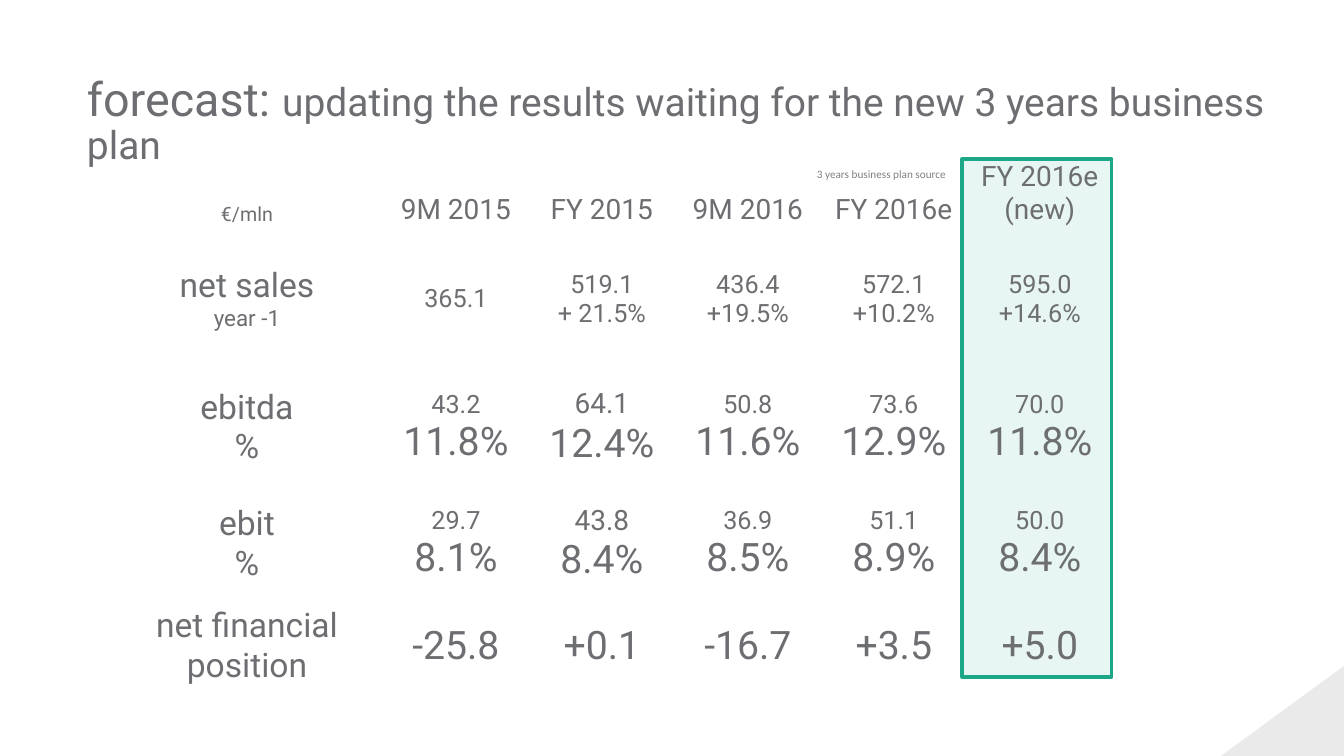
from lxml import etree
from pptx import Presentation
from pptx.dml.color import RGBColor
from pptx.enum.shapes import MSO_SHAPE
from pptx.enum.text import MSO_ANCHOR, MSO_AUTO_SIZE, PP_ALIGN
from pptx.oxml.ns import qn
from pptx.util import Emu, Pt

RECT, WEDGE = MSO_SHAPE.RECTANGLE, MSO_SHAPE.RIGHT_TRIANGLE
TOP, MIDDLE, BOTTOM = MSO_ANCHOR.TOP, MSO_ANCHOR.MIDDLE, MSO_ANCHOR.BOTTOM
LEFT, CENTER = PP_ALIGN.LEFT, PP_ALIGN.CENTER
FIXED = MSO_AUTO_SIZE.NONE

WIDE, HIGH = 1344, 756
SCALE = 12192000 / WIDE
TITLE_ONLY = 5
PLAIN_TABLE = "{2D5ABB26-0587-4C30-8999-92F81FD0307C}"
COLORS = {"text": "6D6E71", "note": "808080", "accent": "1DA789", "corner": "EAEAEA"}

COLS = [272] + [146] * 5
# Per row: height, padding, anchor, label sizes, value sizes, texts
ROWS = [
    (75, 11, BOTTOM, [14], [20],
     ["€/mln", "9M 2015", "FY 2015", "9M 2016", "FY 2016e", "FY 2016e (new)"]),
    (125, 11, MIDDLE, [24, 16], [18, 18],
     ["net sales\nyear -1", "365.1", "519.1\n+ 21.5%", "436.4\n+19.5%",
      "572.1\n+10.2%", "595.0\n+14.6%"]),
    (131, 12, MIDDLE, [24, 24], [18, 28],
     ["ebitda\n%", "43.2\n11.8%", "64.1\n12.4%", "50.8\n11.6%",
      "73.6\n12.9%", "70.0\n11.8%"]),
    (102, 0, MIDDLE, [24, 24], [18, 28],
     ["ebit\n%", "29.7\n8.1%", "43.8\n8.4%", "36.9\n8.5%", "51.1\n8.9%", "50.0\n8.4%"]),
    (102, 0, MIDDLE, [24], [28],
     ["net financial position", "-25.8", "+0.1", "-16.7", "+3.5", "+5.0"]),
]
LARGER = {(2, 2): [20, 28], (3, 2): [20, 28]}


def px(n):
    return Emu(round(n * SCALE))


def rgb(name):
    return RGBColor.from_string(COLORS[name])


class Deck:
    def __init__(self):
        self.prs = Presentation()
        self.prs.slide_width, self.prs.slide_height = px(WIDE), px(HIGH)
        self.slide = self.prs.slides.add_slide(self.prs.slide_layouts[TITLE_ONLY])
        self.shapes = self.slide.shapes

    def style(self, run, size, font="Roboto", color="text"):
        run.font.size, run.font.name = Pt(size), font
        run.font.color.rgb = rgb(color)

    def title(self, x, y, w, h, parts):
        box = self.shapes.title
        box.left, box.top, box.width, box.height = map(px, (x, y, w, h))
        frame = box.text_frame
        frame.margin_left = frame.margin_right = 0
        frame.margin_top = frame.margin_bottom = 0
        frame.vertical_anchor, frame.auto_size = TOP, FIXED
        frame.word_wrap = True
        par = frame.paragraphs[0]
        par.alignment, par.line_spacing = LEFT, 0.9
        for text, size in parts:
            run = par.add_run()
            run.text = text
            self.style(run, size)

    def shape(self, kind, x, y, w, h, fill, alpha=100, line=None, flip=False):
        item = self.shapes.add_shape(kind, *map(px, (x, y, w, h)))
        item.shadow.inherit = False
        item.fill.solid()
        item.fill.fore_color.rgb = rgb(fill)
        if alpha < 100:
            tint = item.fill._xPr.find(".//" + qn("a:srgbClr"))
            etree.SubElement(tint, qn("a:alpha")).set("val", str(alpha * 1000))
        if line:
            item.line.color.rgb = rgb(line)
            item.line.width = Pt(2.25)
        else:
            item.line.fill.background()
        if flip:
            item._element.spPr.find(qn("a:xfrm")).set("flipH", "1")

    def note(self, x, y, w, h, text):
        frame = self.shapes.add_textbox(*map(px, (x, y, w, h))).text_frame
        frame.word_wrap = True
        frame.text = text
        self.style(frame.paragraphs[0].runs[0], 8, "Calibri", "note")

    def cell(self, cell, text, sizes, pad, anchor):
        cell.fill.background()
        cell.vertical_anchor = anchor
        cell.margin_left = cell.margin_right = px(pad)
        cell.margin_top = cell.margin_bottom = px(pad)
        cell.text_frame.text = text
        for par, size in zip(cell.text_frame.paragraphs, sizes):
            par.alignment = CENTER
            self.style(par.runs[0], size)

    def table(self, x, y):
        high = sum(row[0] for row in ROWS)
        frame = self.shapes.add_table(len(ROWS), len(COLS),
                                      *map(px, (x, y, sum(COLS), high)))
        grid = frame.table
        grid.first_row = grid.horz_banding = False
        grid._tbl.tblPr.find(qn("a:tableStyleId")).text = PLAIN_TABLE
        for col, wide in zip(grid.columns, COLS):
            col.width = px(wide)
        for r, (tall, pad, anchor, label, value, texts) in enumerate(ROWS):
            grid.rows[r].height = px(tall)
            for c, text in enumerate(texts):
                sizes = LARGER.get((r, c), value if c else label)
                self.cell(grid.cell(r, c), text, sizes, pad, anchor)


def main():
    deck = Deck()
    deck.shape(RECT, 962, 159, 150, 518, "accent", alpha=10, line="accent")
    deck.table(111, 149)
    deck.title(87, 76, 1257, 82, [
        ("forecast: ", 33.3),
        ("updating the results waiting for the new 3 years business plan", 27.8)])
    deck.shape(WEDGE, 1221, 666, 123, 90, "corner", flip=True)
    deck.note(807, 162, 214, 24, "3 years business plan source")
    deck.prs.save("out.pptx")


if __name__ == "__main__":
    main()
